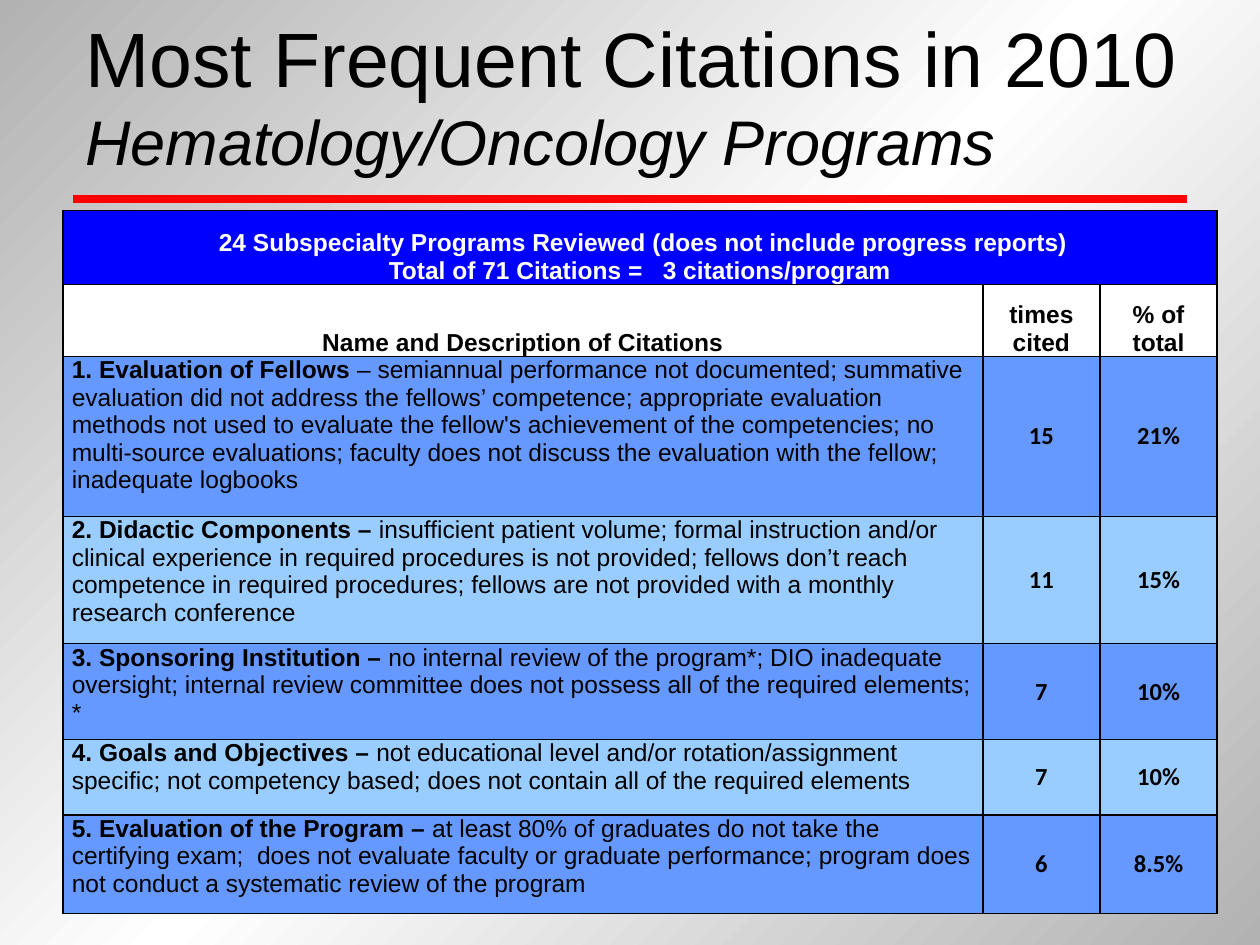
import copy
from dataclasses import dataclass

import lxml.etree
import pptx
import pptx.dml.color
import pptx.enum.shapes
import pptx.enum.text
import pptx.oxml
import pptx.oxml.ns
import pptx.util

Inches = pptx.util.Inches
Pt = pptx.util.Pt
Align = pptx.enum.text.PP_ALIGN
Anchor = pptx.enum.text.MSO_ANCHOR
qn = pptx.oxml.ns.qn


@dataclass(frozen=True)
class Theme:
    """Hold the colours, fonts and type sizes of the slide."""
    black: str = "000000"
    white: str = "FFFFFF"
    grey: str = "B2B2B2"
    red: str = "FF0000"
    banner: str = "0000FF"
    bands: tuple = ("6699FF", "99CCFF")
    text_font: str = "Arial"
    number_font: str = "Calibri"
    title_size: float = 44
    subtitle_size: float = 36
    table_size: float = 14
    rule_width: float = 5
    border_width: float = 1


THEME = Theme()
COLUMNS = (7.3, 0.93, 0.93)
ROWS = (0.59, 0.57, 1.27, 1.01, 0.76, 0.6, 0.78)
BANNER = (
    " 24 Subspecialty Programs Reviewed (does not include progress reports)",
    "Total of 71 Citations =   3 citations/program",
)
HEADINGS = ("Name and Description of Citations", "times cited", "% of total")
CITATIONS = (
    ("1. Evaluation of Fellows ",
     "– semiannual performance not documented; summative evaluation did not address "
     "the fellows’ competence; appropriate evaluation methods not used to evaluate the "
     "fellow's achievement of the competencies; no multi-source evaluations; faculty "
     "does not discuss the evaluation with the fellow; inadequate logbooks",
     "15", "21%"),
    ("2. Didactic Components – ",
     "insufficient patient volume; formal instruction and/or clinical experience in "
     "required procedures is not provided; fellows don’t reach competence in required "
     "procedures; fellows are not provided with a monthly research conference",
     "11", "15%"),
    ("3. Sponsoring Institution – ",
     "no internal review of the program*; DIO inadequate oversight; internal review "
     "committee does not possess all of the required elements; *",
     "7", "10%"),
    ("4. Goals and Objectives – ",
     "not educational level and/or rotation/assignment specific; not competency based; "
     "does not contain all of the required elements",
     "7", "10%"),
    ("5. Evaluation of the Program – ",
     "at least 80% of graduates do not take the certifying exam;  does not evaluate "
     "faculty or graduate performance; program does not conduct a systematic review of "
     "the program",
     "6", "8.5%"),
)


def rgb(value):
    """Turn a hex string into a colour."""
    return pptx.dml.color.RGBColor.from_string(value)


def apply(target, values):
    """Set each attribute of the target from a dict."""
    for name, value in values.items():
        setattr(target, name, value)


def add_span(paragraph, text, color=THEME.black, **values):
    """Add a formatted run to a paragraph."""
    span = paragraph.add_run()
    span.text = text
    apply(span.font, {"name": THEME.text_font, "size": Pt(THEME.table_size), **values})
    span.font.color.rgb = rgb(color)
    return span


def break_line(paragraph, span):
    """Add a line break with the format of the run before it."""
    paragraph.add_line_break()
    paragraph._p[-1].append(copy.deepcopy(span._r.rPr))


def paint_background(page):
    """Fill the page with a diagonal grey and white gradient."""
    fill = page.background.fill
    fill.gradient()
    fill.gradient_angle = 315
    first = fill.gradient_stops[0]._gs
    first.addnext(copy.deepcopy(first))
    colors = (THEME.grey, THEME.white, THEME.grey)
    for stop, position, color in zip(fill.gradient_stops, (0, 0.5, 1), colors):
        stop.position = position
        stop.color.rgb = rgb(color)


def add_rule(page):
    """Draw the red line under the title."""
    line = page.shapes.add_connector(
        pptx.enum.shapes.MSO_CONNECTOR.STRAIGHT,
        Inches(0.58), Inches(1.58), Inches(9.42), Inches(1.58))
    line.line.color.rgb = rgb(THEME.red)
    line.line.width = Pt(THEME.rule_width)
    lxml.etree.SubElement(line._element.spPr, qn("a:effectLst"))


def add_title(page):
    """Add the title and its italic second line."""
    box = page.shapes.add_textbox(Inches(0.58), Inches(0), Inches(9), Inches(1.5))
    apply(box.text_frame, {"word_wrap": True, "vertical_anchor": Anchor.MIDDLE})
    para = box.text_frame.paragraphs[0]
    span = add_span(para, "Most Frequent Citations in 2010", size=Pt(THEME.title_size))
    break_line(para, span)
    add_span(para, "Hematology/Oncology Programs", size=Pt(THEME.subtitle_size), italic=True)


def add_borders(cell):
    """Draw a thin black line on each side of a cell."""
    properties = cell._tc.get_or_add_tcPr()
    for index, side in enumerate(("lnL", "lnR", "lnT", "lnB")):
        border = lxml.etree.Element(qn(f"a:{side}"), w=str(Pt(THEME.border_width)))
        fill = lxml.etree.SubElement(border, qn("a:solidFill"))
        lxml.etree.SubElement(fill, qn("a:srgbClr"), val=THEME.black)
        properties.insert(index, border)


def format_cell(cell, fill, anchor, align):
    """Set fill, borders, margins and alignment, and return the paragraph."""
    cell.fill.solid()
    cell.fill.fore_color.rgb = rgb(fill)
    add_borders(cell)
    apply(cell, {"margin_left": Inches(0.07), "margin_right": Inches(0.07),
                 "margin_top": 0, "margin_bottom": 0, "vertical_anchor": anchor})
    para = cell.text_frame.paragraphs[0]
    para.alignment = align
    return para


def add_table(page):
    """Create the empty table with its column and row sizes."""
    table = page.shapes.add_table(
        len(ROWS), len(COLUMNS), Inches(0.5), Inches(1.67),
        Inches(sum(COLUMNS)), Inches(sum(ROWS))).table
    for column, width in zip(table.columns, COLUMNS):
        column.width = Inches(width)
    for row, height in zip(table.rows, ROWS):
        row.height = Inches(height)
    return table


def fill_header(table):
    """Write the merged banner and the column headings."""
    table.cell(0, 0).merge(table.cell(0, 2))
    paras = [format_cell(cell, THEME.banner, Anchor.BOTTOM, Align.CENTER)
             for cell in table.rows[0].cells]
    span = add_span(paras[0], BANNER[0], THEME.white, bold=True)
    break_line(paras[0], span)
    add_span(paras[0], BANNER[1], THEME.white, bold=True)
    for cell, heading in zip(table.rows[1].cells, HEADINGS):
        para = format_cell(cell, THEME.white, Anchor.BOTTOM, Align.CENTER)
        add_span(para, heading, bold=True)


def fill_citations(table):
    """Write one banded row per citation."""
    for index, (name, description, *numbers) in enumerate(CITATIONS):
        band = THEME.bands[index % 2]
        first, *others = table.rows[index + 2].cells
        para = format_cell(first, band, Anchor.TOP, Align.LEFT)
        add_span(para, name, bold=True)
        add_span(para, description, bold=False)
        for cell, number in zip(others, numbers):
            para = format_cell(cell, band, Anchor.MIDDLE, Align.CENTER)
            add_span(para, number, name=THEME.number_font, bold=True)


def main():
    """Build the slide and save it."""
    deck = pptx.Presentation()
    apply(deck, {"slide_width": Inches(10), "slide_height": Inches(7.5)})
    page = deck.slides.add_slide(deck.slide_layouts[6])
    paint_background(page)
    add_rule(page)
    add_title(page)
    table = add_table(page)
    fill_header(table)
    fill_citations(table)
    deck.save("out.pptx")


if __name__ == "__main__":
    main()
